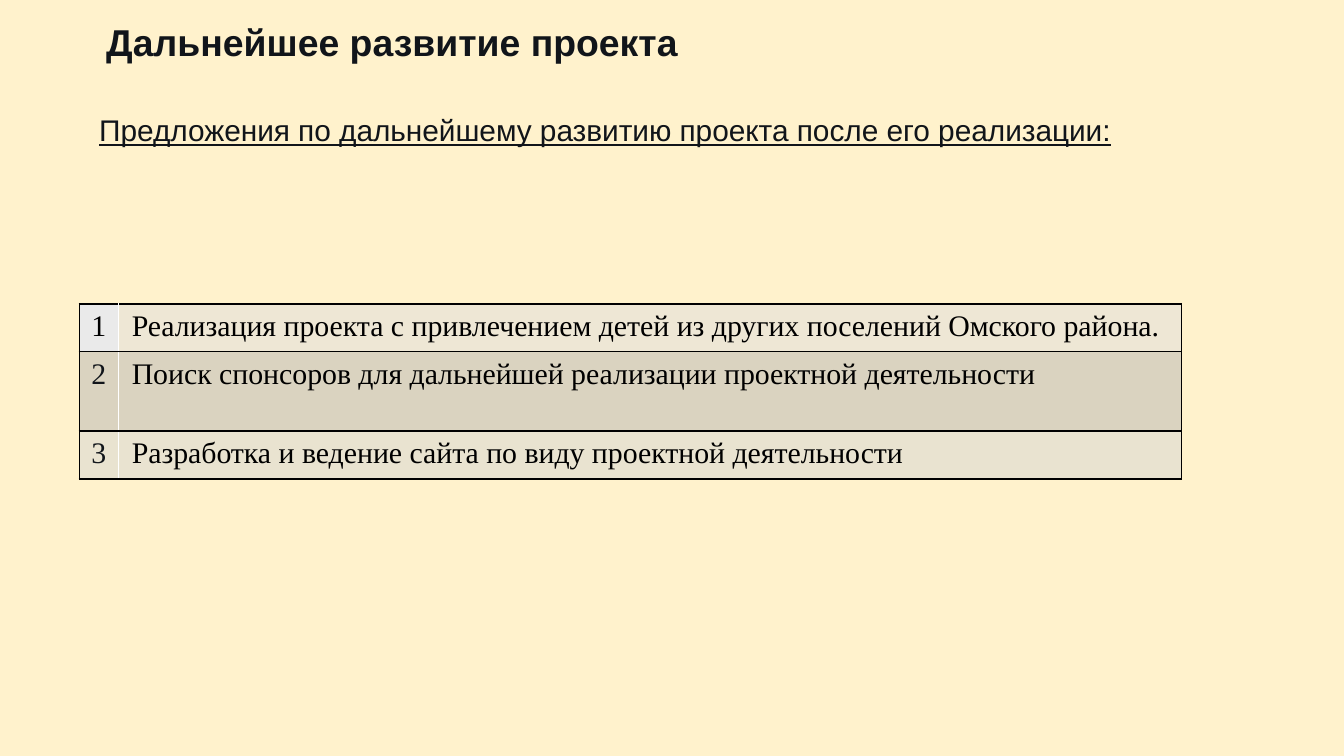
from dataclasses import dataclass

from lxml import etree
from pptx import Presentation
from pptx.dml.color import RGBColor
from pptx.enum.text import MSO_ANCHOR, PP_ALIGN
from pptx.oxml.ns import qn
from pptx.util import Pt

CENTER, LEFT, TOP = PP_ALIGN.CENTER, PP_ALIGN.LEFT, MSO_ANCHOR.TOP


@dataclass(frozen=True)
class Theme:
    """Colours, fonts and sizes of the slide."""
    background: str = "FFF2CC"
    ink: str = "11151A"
    black: str = "000000"
    white: str = "FFFFFF"
    heading_font: str = "Arial"
    table_font: str = "Times New Roman"
    title_size: float = 20
    body_size: float = 16
    outer_line: float = 0.96
    inner_line: float = 0.75


THEME = Theme()
TITLE = "Дальнейшее развитие проекта"
SUBTITLE = "Предложения по дальнейшему развитию проекта после его реализации:"
PROPOSALS = [
    ("Реализация проекта с привлечением детей из других поселений Омского района.",
     24.9, THEME.black, ("EAEAEA", 100), ("DEDEDE", 50)),
    ("Поиск спонсоров для дальнейшей реализации проектной деятельности",
     42.8, THEME.ink, ("B6B6B6", 50), ("B6B6B6", 50)),
    ("Разработка и ведение сайта по виду проектной деятельности",
     24.9, THEME.ink, ("D5D5D5", 50), ("D5D5D5", 50)),
]


def set_font(p, name, size, color):
    """Set the font of a whole paragraph."""
    p.font.name = name
    p.font.size = Pt(size)
    p.font.color.rgb = RGBColor.from_string(color)


def add_heading(s, box, text, size, insets):
    """Place one line of heading text in a box and return its paragraph."""
    tf = s.shapes.add_textbox(*map(Pt, box)).text_frame
    tf.word_wrap = True
    tf.vertical_anchor = TOP
    tf.margin_left = tf.margin_right = Pt(insets[0])
    tf.margin_top, tf.margin_bottom = Pt(insets[1]), Pt(insets[2])
    p = tf.paragraphs[0]
    p.text = text
    set_font(p, THEME.heading_font, size, THEME.ink)
    return p


def fill_cell(cell, color, opacity):
    """Fill a cell with a colour at an opacity in percent."""
    cell.fill.solid()
    cell.fill.fore_color.rgb = RGBColor.from_string(color)
    if opacity < 100:
        rgb = cell._tc.tcPr.find(f".//{qn('a:srgbClr')}")
        etree.SubElement(rgb, qn("a:alpha"), val=str(opacity * 1000))


def border_cell(cell, white_side):
    """Draw black borders with one thin white inner side."""
    tcPr = cell._tc.get_or_add_tcPr()
    for i, side in enumerate("LRTB"):
        inner = side == white_side
        width = THEME.inner_line if inner else THEME.outer_line
        ln = etree.Element(qn(f"a:ln{side}"), w=str(Pt(width)))
        fill = etree.SubElement(ln, qn("a:solidFill"))
        color = THEME.white if inner else THEME.black
        etree.SubElement(fill, qn("a:srgbClr"), val=color)
        tcPr.insert(i, ln)


def write_cell(cell, text, color, align, side_margin):
    """Write one paragraph into a cell."""
    cell.margin_left = cell.margin_right = Pt(side_margin)
    cell.margin_top = cell.margin_bottom = Pt(3.2)
    p = cell.text_frame.paragraphs[0]
    p.text = text
    p.alignment = align
    set_font(p, THEME.table_font, THEME.body_size, color)


def add_proposals(s, box, number_width):
    """Place the numbered table of proposals in a box."""
    table = s.shapes.add_table(len(PROPOSALS), 2, *map(Pt, box)).table
    table.first_row = table.horz_banding = False
    table.columns[0].width = Pt(number_width)
    table.columns[1].width = Pt(box[2] - number_width)
    for i, (text, height, color, number_fill, text_fill) in enumerate(PROPOSALS):
        table.rows[i].height = Pt(height)
        number, proposal = table.cell(i, 0), table.cell(i, 1)
        write_cell(number, str(i + 1), color, CENTER, 3)
        write_cell(proposal, text, THEME.black, LEFT, 7.2)
        for cell, fill, side in ((number, number_fill, "R"), (proposal, text_fill, "L")):
            fill_cell(cell, *fill)
            border_cell(cell, side)


def main():
    """Build and save the slide."""
    prs = Presentation()
    prs.slide_width, prs.slide_height = Pt(720), Pt(405)
    s = prs.slides.add_slide(prs.slide_layouts[6])
    s.background.fill.solid()
    s.background.fill.fore_color.rgb = RGBColor.from_string(THEME.background)
    title = add_heading(s, (56.9, -5.8, 455, 50.4), TITLE, THEME.title_size, (0, 20.2, 0))
    title.font.bold = True
    title.line_spacing = Pt(20)
    subtitle = add_heading(s, (46.1, 56.2, 560, 25.6), SUBTITLE, THEME.body_size, (7.2, 3.6, 3.6))
    subtitle.font.underline = True
    add_proposals(s, (42.5, 162.7, 590.4, 92.6), 20.9)
    prs.save("out.pptx")


if __name__ == "__main__":
    main()
